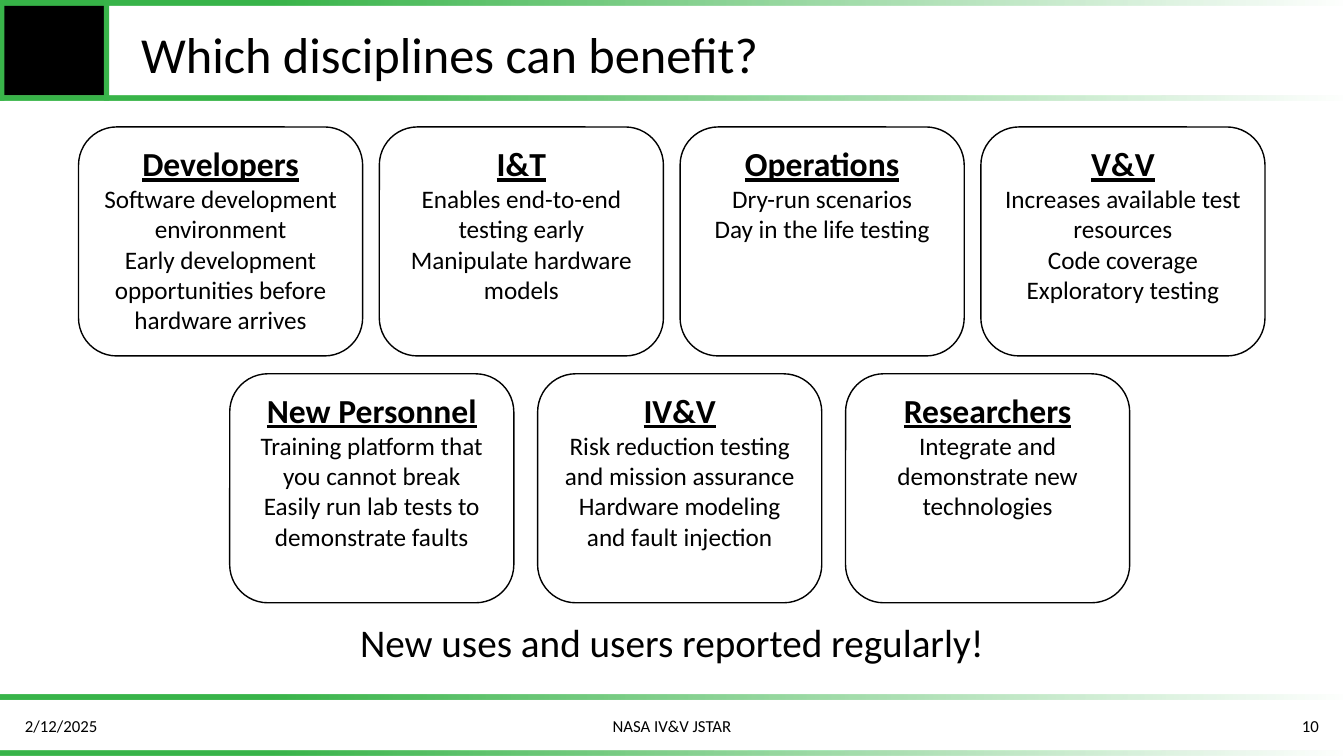
"""Build a slide showing the disciplines that can benefit, as two rows of cards."""
from dataclasses import dataclass

from pptx import Presentation
from pptx.dml.color import RGBColor
from pptx.enum.shapes import MSO_SHAPE
from pptx.enum.text import MSO_ANCHOR, MSO_AUTO_SIZE, PP_ALIGN
from pptx.oxml.ns import qn
from pptx.shapes.autoshape import Shape
from pptx.slide import Slide
from pptx.text.text import _Paragraph as Paragraph
from pptx.util import Cm, Pt

BLACK = RGBColor(0x00, 0x00, 0x00)
WHITE = RGBColor(0xFF, 0xFF, 0xFF)
GREEN = RGBColor(0x39, 0xB5, 0x4A)
FONT = "Calibri"
SLIDE_W, SLIDE_H = 33.87, 19.05
BAR = 0.13
CARD_W, CARD_H = 7.16, 5.77


@dataclass
class Card:
    heading: str
    points: list[str]


@dataclass
class Row:
    left: float
    top: float
    step: float
    cards: list[Card]


@dataclass
class FooterItem:
    text: str
    left: float
    width: float
    align: PP_ALIGN


ROWS = [
    Row(1.98, 3.2, 7.58, [
        Card("Developers", ["Software development environment",
                            "Early development opportunities before hardware arrives"]),
        Card("I&T", ["Enables end-to-end testing early", "Manipulate hardware models"]),
        Card("Operations", ["Dry-run scenarios", "Day in the life testing"]),
        Card("V&V", ["Increases available test resources", "Code coverage",
                     "Exploratory testing"]),
    ]),
    Row(5.79, 9.42, 7.76, [
        Card("New Personnel", ["Training platform that you cannot break",
                               "Easily run lab tests to demonstrate faults"]),
        Card("IV&V", ["Risk reduction testing and mission assurance",
                      "Hardware modeling and fault injection"]),
        Card("Researchers", ["Integrate and demonstrate new technologies"]),
    ]),
]
FOOTER = [
    FooterItem("2/12/2025", 0.38, 7.62, PP_ALIGN.LEFT),
    FooterItem("NASA IV&V JSTAR", 11.22, 11.43, PP_ALIGN.CENTER),
    FooterItem("10", 25.87, 7.62, PP_ALIGN.RIGHT),
]


def place(sp: Shape, left: float, top: float, width: float, height: float) -> None:
    """Move and size a shape, in centimetres."""
    sp.left, sp.top, sp.width, sp.height = Cm(left), Cm(top), Cm(width), Cm(height)


def style(p: Paragraph, size: int, align: PP_ALIGN, heading: bool = False) -> None:
    """Align a paragraph and format its runs."""
    p.alignment = align
    for r in p.runs:
        r.font.name, r.font.size = FONT, Pt(size)
        r.font.bold = r.font.underline = heading
        r.font.color.rgb = BLACK


def add_block(s: Slide, left: float, top: float, width: float, height: float,
              color: RGBColor) -> Shape:
    """Add a plain filled rectangle."""
    sp = s.shapes.add_shape(MSO_SHAPE.RECTANGLE, Cm(left), Cm(top), Cm(width), Cm(height))
    sp.shadow.inherit = False
    sp.fill.solid()
    sp.fill.fore_color.rgb = color
    sp.line.fill.background()
    return sp


def add_fading_bar(s: Slide, top: float) -> None:
    """Add a full-width bar that fades out to the right."""
    sp = add_block(s, 0, top, SLIDE_W, BAR, GREEN)
    sp.fill.gradient()
    sp.fill.gradient_angle = 0
    for stop, position in zip(sp.fill.gradient_stops, (0.2, 1)):
        stop.color.rgb = GREEN
        stop.position = position
    end_color = list(sp._element.spPr.iter(qn("a:srgbClr")))[-1]
    end_color.makeelement(qn("a:alpha"), {})
    alpha = end_color.makeelement(qn("a:alpha"), {"val": "0"})
    end_color.append(alpha)


def add_frame(s: Slide) -> None:
    """Draw the header block, its green sides and the fading bars."""
    add_block(s, 0, 0, 2.69, 2.41, BLACK)
    for top in (2.41, 17.5):
        add_fading_bar(s, top)
    for left in (2.62, 0):
        add_block(s, left, 0, 0.11 if left == 0 else BAR, 2.54, GREEN)
    for top in (0, SLIDE_H - BAR):
        add_fading_bar(s, top)


def add_card(s: Slide, card: Card, left: float, top: float) -> None:
    """Add a rounded card with an underlined heading and its points."""
    sp = s.shapes.add_shape(MSO_SHAPE.ROUNDED_RECTANGLE, Cm(left), Cm(top),
                            Cm(CARD_W), Cm(CARD_H))
    sp.shadow.inherit = False
    sp.fill.solid()
    sp.fill.fore_color.rgb = WHITE
    sp.line.color.rgb = BLACK
    sp.line.width = Pt(1)
    tf = sp.text_frame
    tf.word_wrap = True
    tf.vertical_anchor = MSO_ANCHOR.TOP
    tf.text = "\n".join([card.heading, *card.points])
    for i, p in enumerate(tf.paragraphs):
        style(p, 18 if i else 24, PP_ALIGN.CENTER, heading=i == 0)


def add_footer(s: Slide, item: FooterItem) -> None:
    """Add one footer text."""
    sp = s.shapes.add_textbox(Cm(item.left), Cm(17.78), Cm(item.width), Cm(1.02))
    tf = sp.text_frame
    tf.word_wrap = True
    tf.vertical_anchor = MSO_ANCHOR.MIDDLE
    tf.text = item.text
    style(tf.paragraphs[0], 12, item.align)


def fill_placeholder(sp: Shape, text: str, size: int, align: PP_ALIGN,
                     anchor: MSO_ANCHOR, spacing: float) -> None:
    """Write one unbulleted line into a placeholder."""
    tf = sp.text_frame
    tf.word_wrap = True
    tf.auto_size = MSO_AUTO_SIZE.NONE
    tf.vertical_anchor = anchor
    tf.text = text
    p = tf.paragraphs[0]
    pPr = p._p.get_or_add_pPr()
    pPr.set("marL", "0")
    pPr.set("indent", "0")
    pPr.append(pPr.makeelement(qn("a:buNone"), {}))
    p.line_spacing = spacing
    p.space_before = Pt(0)
    style(p, size, align)


def main() -> None:
    """Build and save the slide."""
    prs = Presentation()
    prs.slide_width, prs.slide_height = Cm(SLIDE_W), Cm(SLIDE_H)
    s = prs.slides.add_slide(prs.slide_layouts[1])
    title, closing = s.placeholders
    place(title, 3.3, 0.58, 28.8, 1.73)
    fill_placeholder(title, "Which disciplines can benefit?", 36, PP_ALIGN.LEFT,
                     MSO_ANCHOR.MIDDLE, 0.9)
    place(closing, 1.17, 15.67, 31.52, 1.3)
    fill_placeholder(closing, "New uses and users reported regularly!", 28,
                     PP_ALIGN.CENTER, MSO_ANCHOR.TOP, 0.8)
    add_frame(s)
    for item in FOOTER:
        add_footer(s, item)
    for row in ROWS:
        for i, card in enumerate(row.cards):
            add_card(s, card, row.left + i * row.step, row.top)
    prs.save("out.pptx")


if __name__ == "__main__":
    main()
